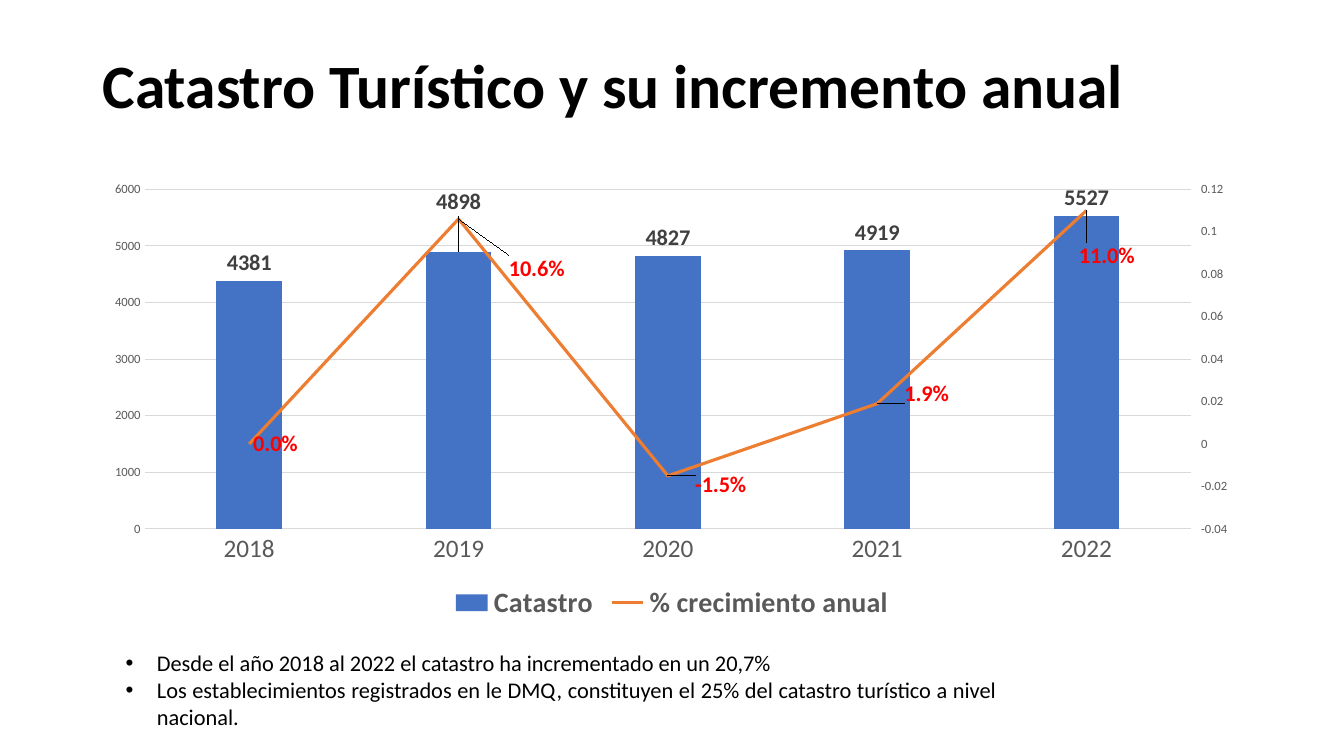
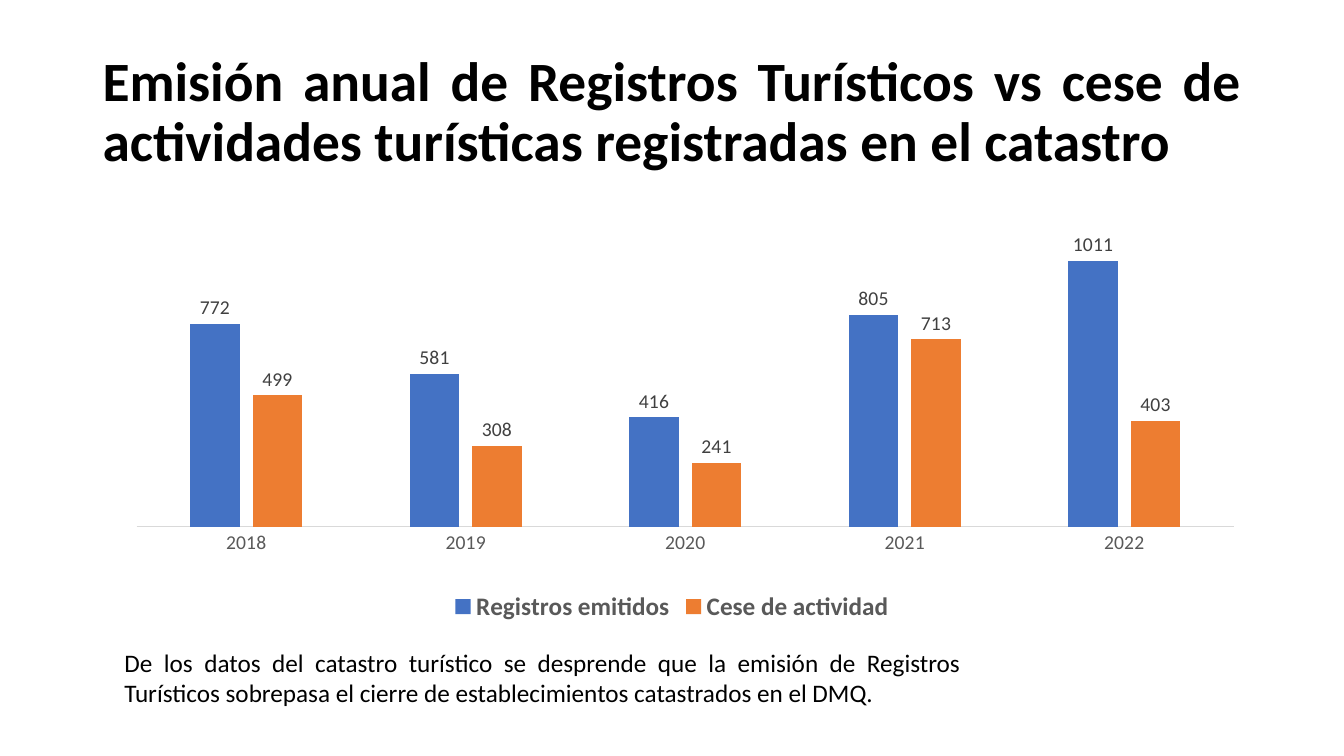
import pptx
import pptx.util
import pptx.oxml
import pptx.oxml.ns
import pptx.chart.axis
import pptx.chart.data
import pptx.dml.color
import pptx.enum.chart
import pptx.enum.shapes
import pptx.enum.text

Cm = pptx.util.Cm
Pt = pptx.util.Pt
qn = pptx.oxml.ns.qn
XL = pptx.enum.chart

FONT = "Calibri"
COLORS = {
    "text": "000000",
    "white": "FFFFFF",
    "blue": "4472C4",
    "orange": "ED7D31",
    "grid": "D9D9D9",
    "axis": "595959",
    "label": "404040",
    "growth": "FF0000",
}
YEARS = ["2018", "2019", "2020", "2021", "2022"]
LEFT, WIDTH = Cm(2.33), Cm(29.21)
NOTE_LEFT, NOTE_TOP = Cm(2.79), Cm(16.1)
CHART_NS = pptx.oxml.ns.nsdecls("c")


def rgb(name):
    return pptx.dml.color.RGBColor.from_string(COLORS[name])


def style_font(font, size, color, bold=False):
    font.name = FONT
    font.size = Pt(size)
    font.bold = bold
    font.color.rgb = rgb(color)


def add_run(p, text, size, bold=False):
    r = p.add_run()
    r.text = text
    style_font(r.font, size, "text", bold)


def add_titled_slide(prs, title, top, size):
    s = prs.slides.add_slide(prs.slide_layouts[5])
    sp = s.shapes.title
    sp.left, sp.top, sp.width, sp.height = LEFT, top, WIDTH, Cm(3.68)
    tf = sp.text_frame
    tf.word_wrap = True
    tf.auto_size = pptx.enum.text.MSO_AUTO_SIZE.NONE
    tf.vertical_anchor = pptx.enum.text.MSO_ANCHOR.MIDDLE
    p = tf.paragraphs[0]
    p.alignment = pptx.enum.text.PP_ALIGN.JUSTIFY
    p.line_spacing = 0.9
    add_run(p, title, size, bold=True)
    return s


def add_bullet(p):
    pPr = p._p.get_or_add_pPr()
    pPr.set("marL", str(Cm(0.79)))
    pPr.set("indent", str(-Cm(0.79)))
    ns = pptx.oxml.ns.nsdecls("a")
    pPr.append(pptx.oxml.parse_xml(f'<a:buFont {ns} typeface="Arial"/>'))
    pPr.append(pptx.oxml.parse_xml(f'<a:buChar {ns} char="•"/>'))


def add_note(s, texts, width, height, size, bullets=False):
    sp = s.shapes.add_shape(
        pptx.enum.shapes.MSO_SHAPE.ROUNDED_RECTANGLE,
        NOTE_LEFT, NOTE_TOP, width, height)
    sp.shadow.inherit = False
    sp.fill.solid()
    sp.fill.fore_color.rgb = rgb("white")
    sp.line.fill.background()
    tf = sp.text_frame
    tf.word_wrap = True
    tf.vertical_anchor = pptx.enum.text.MSO_ANCHOR.MIDDLE
    for i, text in enumerate(texts):
        p = tf.add_paragraph() if i else tf.paragraphs[0]
        p.alignment = pptx.enum.text.PP_ALIGN.JUSTIFY
        if bullets:
            add_bullet(p)
        add_run(p, text, size)


def layout_xml(**values):
    items = "".join(f'<c:{k} val="{v}"/>' for k, v in values.items())
    return pptx.oxml.parse_xml(
        f"<c:layout {CHART_NS}><c:manualLayout>{items}"
        "</c:manualLayout></c:layout>")


def place_plot(chart, x, y, w, h):
    area = chart.plots[0]._element.getparent()
    for old in area.findall(qn("c:layout")):
        area.remove(old)
    area.insert(0, layout_xml(layoutTarget="inner", xMode="edge",
                              yMode="edge", x=x, y=y, w=w, h=h))


def add_column_chart(s, top, height, series, category_size, legend_size, plot):
    data = pptx.chart.data.CategoryChartData()
    data.categories = YEARS
    for name, values in series:
        data.add_series(name, values)
    chart = s.shapes.add_chart(XL.XL_CHART_TYPE.COLUMN_CLUSTERED,
                               LEFT, top, WIDTH, height, data).chart
    chart.has_title = False
    style_font(chart.font, 10, "text")
    chart.has_legend = True
    chart.legend.position = XL.XL_LEGEND_POSITION.BOTTOM
    chart.legend.include_in_layout = False
    style_font(chart.legend.font, legend_size, "axis", bold=True)
    chart.plots[0].gap_width = 219
    chart.plots[0].vary_by_categories = False
    for ser, color in zip(chart.series, ("blue", "orange")):
        ser.format.fill.solid()
        ser.format.fill.fore_color.rgb = rgb(color)
    axis = chart.category_axis
    axis.major_tick_mark = XL.XL_TICK_MARK.NONE
    axis.format.line.color.rgb = rgb("grid")
    axis.format.line.width = Pt(0.75)
    style_font(axis.tick_labels.font, category_size, "axis")
    place_plot(chart, *plot)
    return chart


def style_value_axis(axis, low, high, step, tick):
    axis.minimum_scale, axis.maximum_scale = low, high
    axis.major_unit = step
    axis.major_tick_mark = tick
    axis.format.line.fill.background()
    style_font(axis.tick_labels.font, 9, "axis")


def label_series(ser, size, color, position, bold=False, number_format="General"):
    labels = ser.data_labels
    labels.show_value = True
    labels.number_format = number_format
    labels.number_format_is_linked = False
    labels.position = position
    style_font(labels.font, size, color, bold)


def shift_label(ser, index, dx, dy, size, color, position, number_format):
    label = ser.points[index].data_label
    style_font(label.font, size, color, bold=True)
    label.position = position
    dLbls = ser.data_labels._element
    for dLbl in dLbls.findall(qn("c:dLbl")):
        idx = dLbl.find(qn("c:idx"))
        if idx.get("val") == str(index):
            idx.addnext(pptx.oxml.parse_xml(
                f'<c:numFmt {CHART_NS} formatCode="{number_format}" '
                'sourceLinked="0"/>'))
            idx.addnext(layout_xml(x=dx, y=dy))


def move_to_right_axis(chart):
    bars = chart.plots[0]._element
    ser = bars.findall(qn("c:ser"))[1]
    for tag in ("c:invertIfNegative", "c:spPr"):
        for item in ser.findall(qn(tag)):
            ser.remove(item)
    line = pptx.oxml.parse_xml(
        f'<c:lineChart {CHART_NS}><c:grouping val="standard"/>'
        '<c:varyColors val="0"/><c:marker val="1"/>'
        '<c:axId val="5001"/><c:axId val="5002"/></c:lineChart>')
    line.insert(2, ser)
    bars.addnext(line)
    val_ax = pptx.oxml.parse_xml(
        f'<c:valAx {CHART_NS}><c:axId val="5002"/>'
        '<c:scaling><c:orientation val="minMax"/></c:scaling>'
        '<c:delete val="0"/><c:axPos val="r"/>'
        '<c:numFmt formatCode="General" sourceLinked="0"/>'
        '<c:majorTickMark val="out"/><c:minorTickMark val="none"/>'
        '<c:tickLblPos val="nextTo"/><c:crossAx val="5001"/>'
        '<c:crosses val="max"/></c:valAx>')
    cat_ax = pptx.oxml.parse_xml(
        f'<c:catAx {CHART_NS}><c:axId val="5001"/>'
        '<c:scaling><c:orientation val="minMax"/></c:scaling>'
        '<c:delete val="1"/><c:axPos val="b"/>'
        '<c:crossAx val="5002"/><c:crosses val="autoZero"/></c:catAx>')
    first_val = bars.getparent().find(qn("c:valAx"))
    first_val.addnext(val_ax)
    val_ax.addnext(cat_ax)
    return pptx.chart.axis.ValueAxis(val_ax)


def build_growth_slide(prs):
    s = add_titled_slide(prs, "Catastro Turístico y su incremento anual",
                         Cm(0.38), 44)
    chart = add_column_chart(
        s, Cm(4.37), Cm(11.4),
        [("Catastro", (4381, 4898, 4827, 4919, 5527)),
         ("% crecimiento anual", (0, 0.106, -0.015, 0.019, 0.11))],
        18, 20, (0.045, 0.035, 0.903, 0.751))
    axis = chart.value_axis
    style_value_axis(axis, 0, 6000, 1000, XL.XL_TICK_MARK.NONE)
    axis.major_gridlines.format.line.color.rgb = rgb("grid")
    axis.major_gridlines.format.line.width = Pt(0.75)
    right_axis = move_to_right_axis(chart)
    style_value_axis(right_axis, -0.04, 0.12, 0.02, XL.XL_TICK_MARK.OUTSIDE)

    above = XL.XL_LABEL_POSITION.OUTSIDE_END
    beside = XL.XL_LABEL_POSITION.RIGHT
    total = chart.plots[0].series[0]
    label_series(total, 16, "label", above, bold=True)
    shift_label(total, 1, 0, -0.07, 16, "label", above, "General")

    growth = chart.plots[1].series[0]
    growth.smooth = False
    growth.marker.style = XL.XL_MARKER_STYLE.NONE
    growth.format.line.color.rgb = rgb("orange")
    growth.format.line.width = Pt(2.25)
    label_series(growth, 16, "growth", beside, bold=True, number_format="0.0%")
    shifts = [(0.04, 0.11), (0.02, 0.02), (0.02, -0.02), (-0.01, 0.1)]
    for i, (dx, dy) in enumerate(shifts, 1):
        shift_label(growth, i, dx, dy, 16, "growth", beside, "0.0%")

    add_note(s, [
        "Desde el año 2018 al 2022 el catastro ha incrementado en un 20,7%",
        "Los establecimientos registrados en le DMQ, constituyen el 25% "
        "del catastro turístico a nivel nacional.",
    ], Cm(22.71), Cm(2.57), 16, bullets=True)


def build_registry_slide(prs):
    s = add_titled_slide(
        prs, "Emisión anual de Registros Turísticos vs cese de actividades "
        "turísticas registradas en el catastro", Cm(1.02), 39.6)
    add_note(s, [
        "De los datos del catastro turístico se desprende que la emisión de "
        "Registros Turísticos sobrepasa el cierre de establecimientos "
        "catastrados en el DMQ.",
    ], Cm(21.77), Cm(1.93), 18)
    chart = add_column_chart(
        s, Cm(5.08), Cm(10.72),
        [("Registros emitidos", (772, 581, 416, 805, 1011)),
         ("Cese de actividad", (499, 308, 241, 713, 403))],
        14, 18, (0.038, 0.023, 0.947, 0.741))
    chart.plots[0].overlap = -27
    axis = chart.value_axis
    axis.minimum_scale, axis.maximum_scale = 0, 1200
    axis.has_major_gridlines = False
    axis.visible = False
    for ser in chart.series:
        label_series(ser, 14, "label", XL.XL_LABEL_POSITION.OUTSIDE_END)


def main():
    prs = pptx.Presentation()
    prs.slide_width, prs.slide_height = Cm(33.87), Cm(19.05)
    build_growth_slide(prs)
    build_registry_slide(prs)
    prs.save("out.pptx")


if __name__ == "__main__":
    main()
